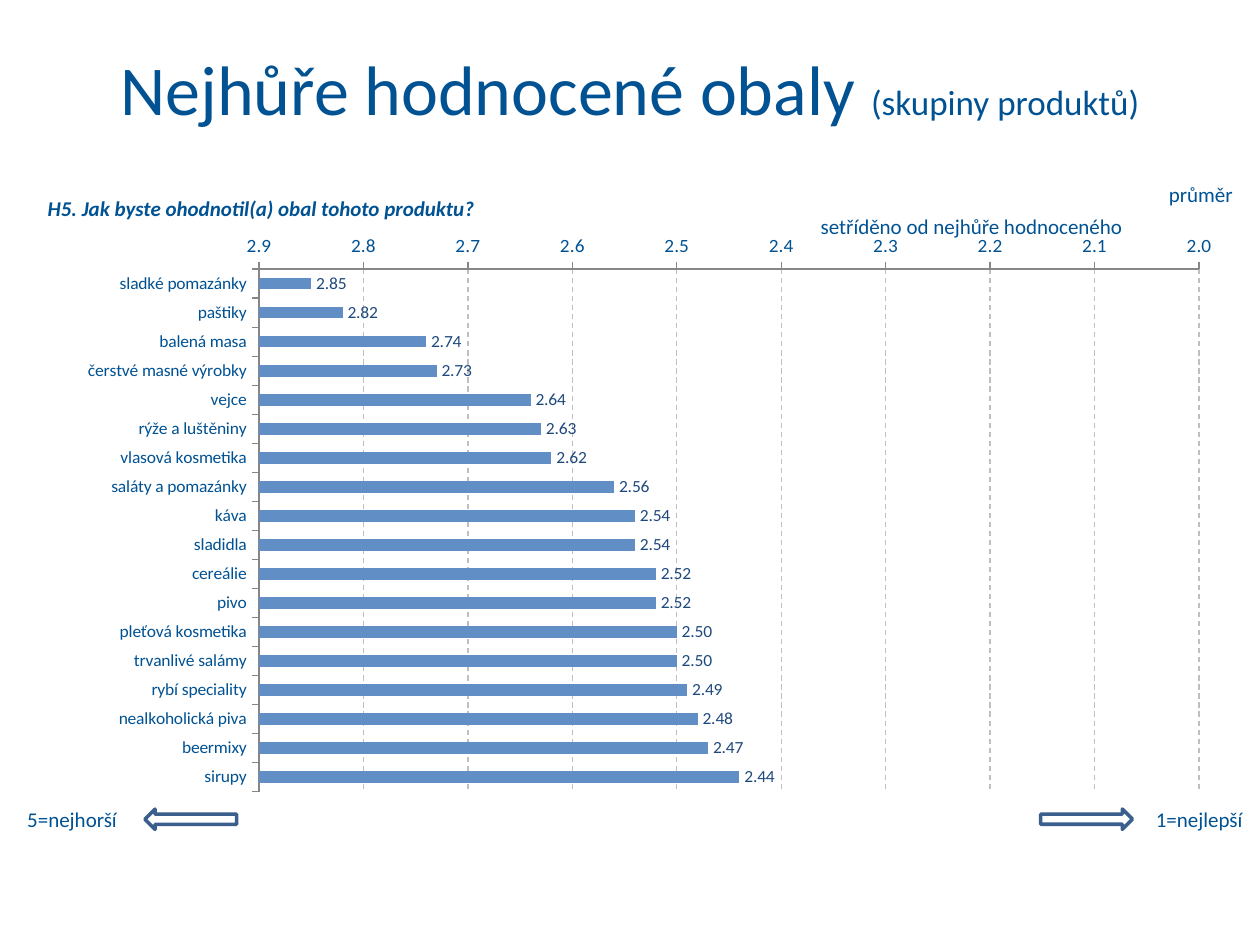
from lxml.etree import SubElement
from pptx import Presentation
from pptx.chart.data import CategoryChartData as ChartData
from pptx.dml.color import RGBColor
from pptx.enum.chart import XL_AXIS_CROSSES as Crosses
from pptx.enum.chart import XL_CHART_TYPE as ChartType
from pptx.enum.chart import XL_LABEL_POSITION as LabelPosition
from pptx.enum.chart import XL_TICK_MARK as TickMark
from pptx.enum.dml import MSO_LINE_DASH_STYLE as Dash
from pptx.enum.shapes import MSO_SHAPE as Preset
from pptx.enum.text import MSO_ANCHOR as Anchor
from pptx.enum.text import PP_ALIGN as Align
from pptx.oxml.ns import qn
from pptx.util import Cm, Pt

NAVY, WHITE, GREY = "005293", "FFFFFF", "868686"
RATINGS = {
    "sladké pomazánky": 2.85, "paštiky": 2.82, "balená masa": 2.74,
    "čerstvé masné výrobky": 2.73, "vejce": 2.64, "rýže a luštěniny": 2.63,
    "vlasová kosmetika": 2.62, "saláty a pomazánky": 2.56, "káva": 2.54,
    "sladidla": 2.54, "cereálie": 2.52, "pivo": 2.52,
    "pleťová kosmetika": 2.5, "trvanlivé salámy": 2.5,
    "rybí speciality": 2.49, "nealkoholická piva": 2.48,
    "beermixy": 2.47, "sirupy": 2.44,
}


def color(value):
    return RGBColor.from_string(value)


def apply(target, formats):
    for name, value in formats.items():
        setattr(target, name, value)


def set_font(font, size, value=NAVY, **formats):
    apply(font, {"name": "Calibri", "size": Pt(size), **formats})
    font.color.rgb = color(value)


def set_line(line, value, width):
    line.color.rgb = color(value)
    line.width = Pt(width)


def add_text(page, box, spans, align=Align.LEFT, anchor=Anchor.TOP, fill=None, **formats):
    shape = page.shapes.add_textbox(*map(Cm, box))
    apply(shape.text_frame, {"word_wrap": True, "vertical_anchor": anchor})
    if fill:
        shape.fill.solid()
        shape.fill.fore_color.rgb = color(fill)
    para = shape.text_frame.paragraphs[0]
    para.alignment = align
    for text, size in spans:
        span = para.add_run()
        span.text = text
        set_font(span.font, size, **formats)


def add_title(page, box):
    spans = [("Nejhůře hodnocené obaly ", 40), ("(skupiny produktů)", 20)]
    add_text(page, box, spans, Align.CENTER, Anchor.MIDDLE)


def add_captions(page, box):
    left, top, width, height = box
    right = left + width
    add_text(page, (right - 4.11, top, 4.11, 0.76), [("průměr", 12)], Align.RIGHT)
    add_text(page, (left, top + 0.13, 20.07, 1.07),
             [("H5. Jak byste ohodnotil(a) obal tohoto produktu?", 12)],
             anchor=Anchor.MIDDLE, bold=True, italic=True)
    add_text(page, (right - 11.21, top + height - 0.76, 8.99, 0.76),
             [("setříděno od nejhůře hodnoceného", 12)], Align.RIGHT)


def set_plot_layout(chart, x, y, w, h):
    plot_area = chart.plots[0]._element.getparent()
    for old in plot_area.findall(qn("c:layout")):
        plot_area.remove(old)
    layout = SubElement(plot_area, qn("c:layout"))
    plot_area.insert(0, layout)
    manual = SubElement(layout, qn("c:manualLayout"))
    values = {"layoutTarget": "inner", "xMode": "edge", "yMode": "edge",
              "x": x, "y": y, "w": w, "h": h}
    for name, value in values.items():
        SubElement(manual, qn(f"c:{name}")).set("val", str(value))


def add_ratings_chart(page, box):
    data = ChartData()
    data.categories = list(RATINGS)
    data.add_series("Series 1", list(RATINGS.values()))
    chart = page.shapes.add_chart(ChartType.BAR_CLUSTERED, *map(Cm, box), data).chart
    apply(chart, {"has_legend": False, "has_title": False})
    set_font(chart.font, 18, "000000")
    set_plot_layout(chart, 0.2, 0.03, 0.77, 0.89)

    plot = chart.plots[0]
    apply(plot, {"gap_width": 150, "vary_by_categories": False, "has_data_labels": True})
    apply(plot.data_labels, {
        "show_value": True, "number_format": "#,##0.00",
        "number_format_is_linked": False, "position": LabelPosition.OUTSIDE_END})
    set_font(plot.data_labels.font, 10, "1F497D")
    bars = plot.series[0].format.fill
    bars.solid()
    bars.fore_color.rgb = color("618EC4")

    for axis, size in ((chart.category_axis, 10), (chart.value_axis, 11)):
        apply(axis, {"reverse_order": True, "crosses": Crosses.MAXIMUM,
                     "major_tick_mark": TickMark.OUTSIDE,
                     "minor_tick_mark": TickMark.NONE})
        set_font(axis.tick_labels.font, size)
        set_line(axis.format.line, GREY, 0.75)
    scale = chart.value_axis
    apply(scale, {"minimum_scale": 2, "maximum_scale": 2.9, "major_unit": 0.1,
                  "has_major_gridlines": True})
    apply(scale.tick_labels, {"number_format": "#,##0.0", "number_format_is_linked": False})
    grid = scale.major_gridlines.format.line
    set_line(grid, "BFBFBF", 0.75)
    grid.dash_style = Dash.DASH


def add_scale_ends(page, box):
    left, top, width, height = box
    label, arrow = 4.11, 1.85
    far = left + width
    ends = (
        ("5=nejhorší", left, Align.LEFT, None, left + 2.62, 180),
        ("1=nejlepší", far - label, Align.RIGHT, WHITE, far - 2.47 - arrow, 0),
    )
    for text, start, align, fill, arrow_left, rotation in ends:
        add_text(page, (start, top, label, height), [(text, 12)], align, fill=fill)
        shape = page.shapes.add_shape(
            Preset.RIGHT_ARROW, *map(Cm, (arrow_left, top + 0.18, arrow, 0.41)))
        shape.rotation = rotation
        shape.shadow.inherit = False
        shape.fill.solid()
        shape.fill.fore_color.rgb = color(WHITE)
        set_line(shape.line, "3A5F8C", 2)


def main():
    deck = Presentation()
    apply(deck, {"slide_width": Cm(25.4), "slide_height": Cm(19.05)})
    page = deck.slides.add_slide(deck.slide_layouts[6])
    add_title(page, (0, 0, 25.4, 3.51))
    add_captions(page, (0.71, 3.53, 24.39, 1.42))
    add_ratings_chart(page, (0.3, 4.72, 24.61, 12.19))
    add_scale_ends(page, (0.3, 16.13, 25, 0.76))
    deck.save("out.pptx")


if __name__ == "__main__":
    main()
